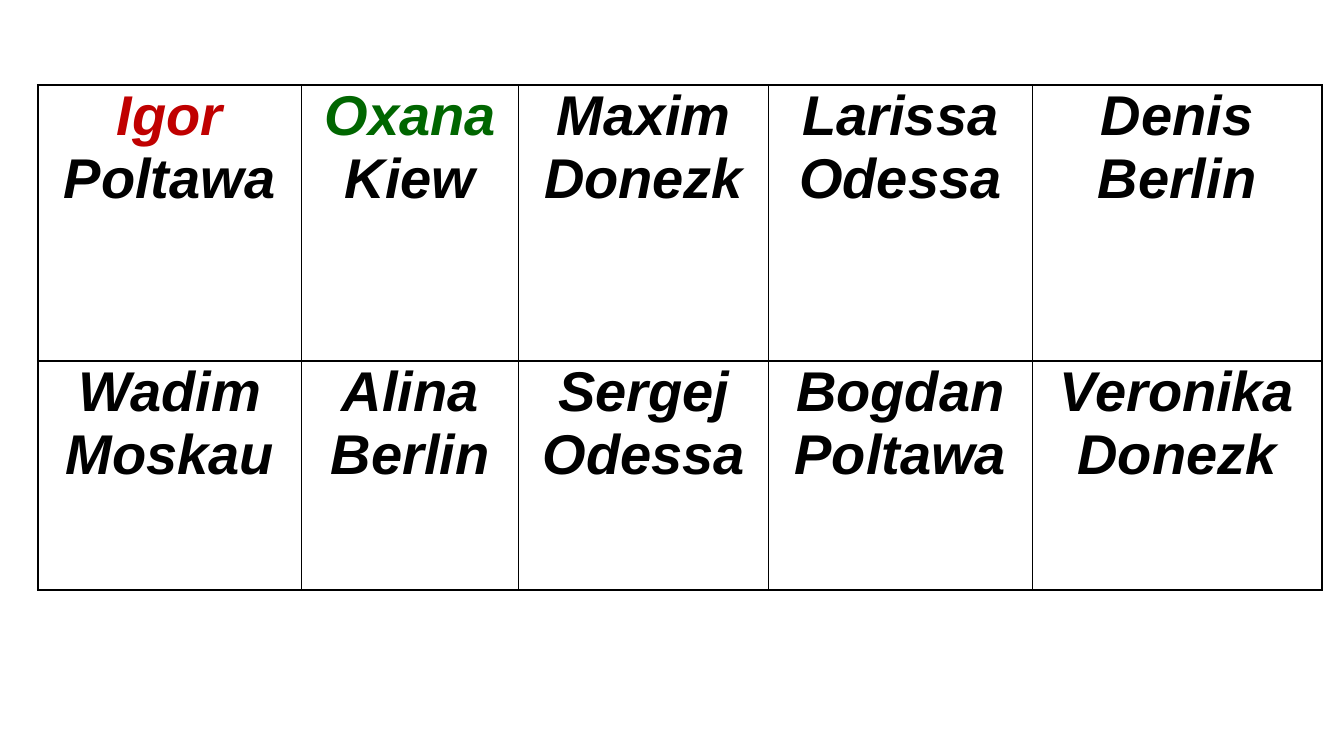
from lxml.etree import SubElement
from pptx import Presentation
from pptx.dml.color import RGBColor
from pptx.enum.text import PP_ALIGN
from pptx.oxml.ns import qn
from pptx.util import Emu, Pt

BLACK, RED, GREEN = "000000", "C00000", "006600"
PEOPLE = [
    [("Igor", "Poltawa"), ("Oxana", "Kiew"), ("Maxim", "Donezk"),
     ("Larissa", "Odessa"), ("Denis", "Berlin")],
    [("Wadim", "Moskau"), ("Alina", "Berlin"), ("Sergej", "Odessa"),
     ("Bogdan", "Poltawa"), ("Veronika", "Donezk")],
]
NAME_COLORS = {"Igor": RED, "Oxana": GREEN}
COL_WIDTHS = [251, 207, 238, 251, 276]
ROW_HEIGHTS = [263, 218]


def px(n):
    return Emu(n * 9525)


def rgb(color):
    return RGBColor.from_string(color)


class SlideBuilder:
    font = "Arial"
    size = 40
    thin, thick = 1, 1.5

    def __init__(self, prs):
        self.s = prs.slides.add_slide(prs.slide_layouts[6])

    def table(self, x, y, widths, heights, rows):
        frame = self.s.shapes.add_table(
            len(heights), len(widths), px(x), px(y),
            px(sum(widths)), px(sum(heights)))
        tbl = frame.table
        tbl.first_row = tbl.horz_banding = False
        for col, w in zip(tbl.columns, widths):
            col.width = px(w)
        for row, h in zip(tbl.rows, heights):
            row.height = px(h)
        last = len(widths) - 1
        for i, people in enumerate(rows):
            for j, person in enumerate(people):
                cell = tbl.cell(i, j)
                self.borders(cell, {
                    "L": self.thick if j == 0 else self.thin,
                    "R": self.thick if j == last else self.thin,
                    "T": self.thick,
                    "B": self.thick,
                })
                self.person(cell, *person)

    def borders(self, cell, widths):
        tcPr = cell._tc.get_or_add_tcPr()
        for side, width in widths.items():
            ln = SubElement(tcPr, qn(f"a:ln{side}"), w=str(Pt(width)))
            fill = SubElement(ln, qn("a:solidFill"))
            SubElement(fill, qn("a:srgbClr"), val=BLACK)

    def person(self, cell, name, city):
        cell.fill.background()
        cell.margin_left = cell.margin_right = px(5)
        cell.margin_top = cell.margin_bottom = 0
        tf = cell.text_frame
        tf.text = f"{name}\n{city}"
        for p, color in zip(tf.paragraphs, (NAME_COLORS.get(name, BLACK), BLACK)):
            p.alignment = PP_ALIGN.CENTER
            font = p.runs[0].font
            font.name = self.font
            font.size = Pt(self.size)
            font.bold = font.italic = True
            font.color.rgb = rgb(color)


def main():
    prs = Presentation()
    prs.slide_width, prs.slide_height = px(1280), px(720)
    SlideBuilder(prs).table(36, 81, COL_WIDTHS, ROW_HEIGHTS, PEOPLE)
    prs.save("out.pptx")


if __name__ == "__main__":
    main()
